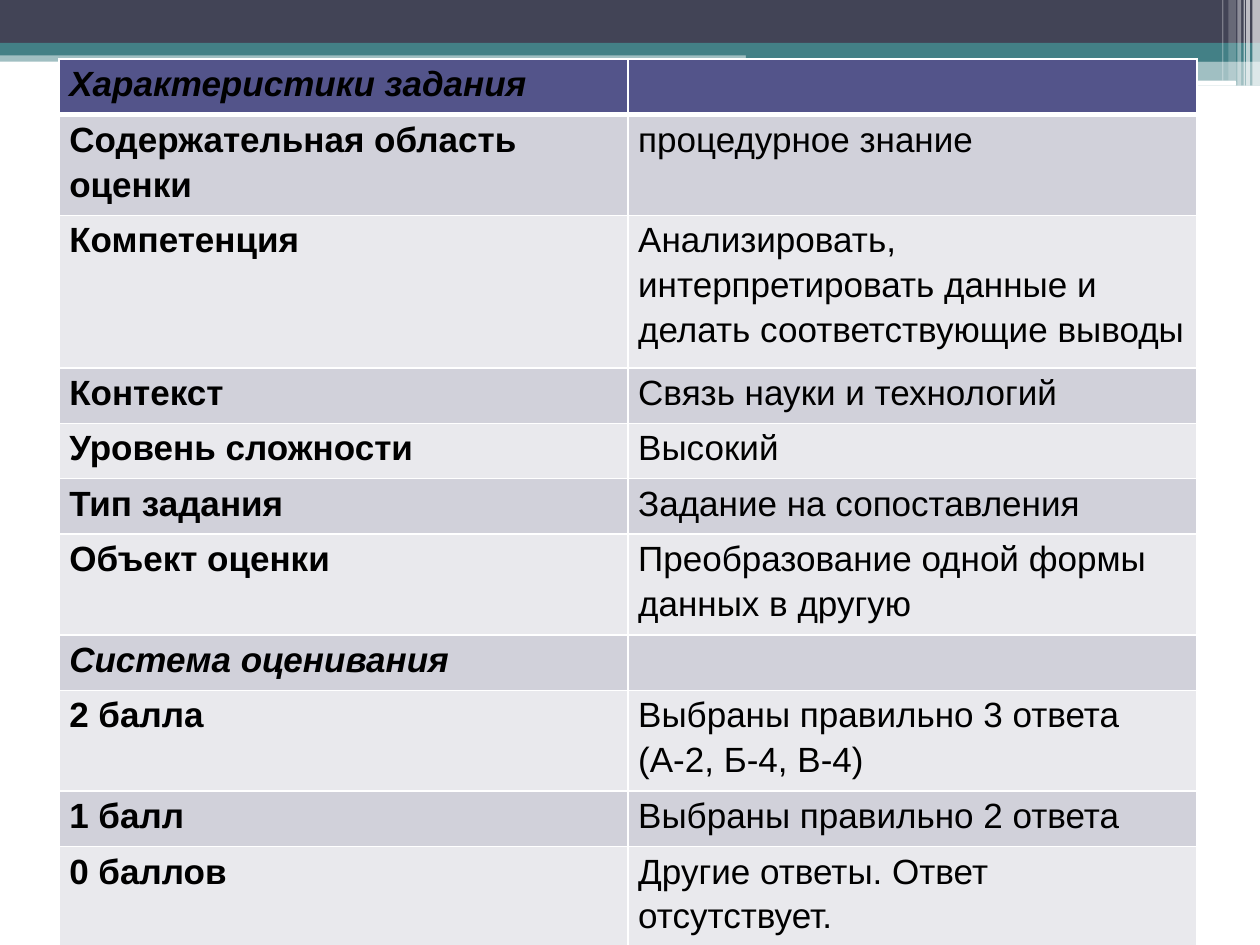
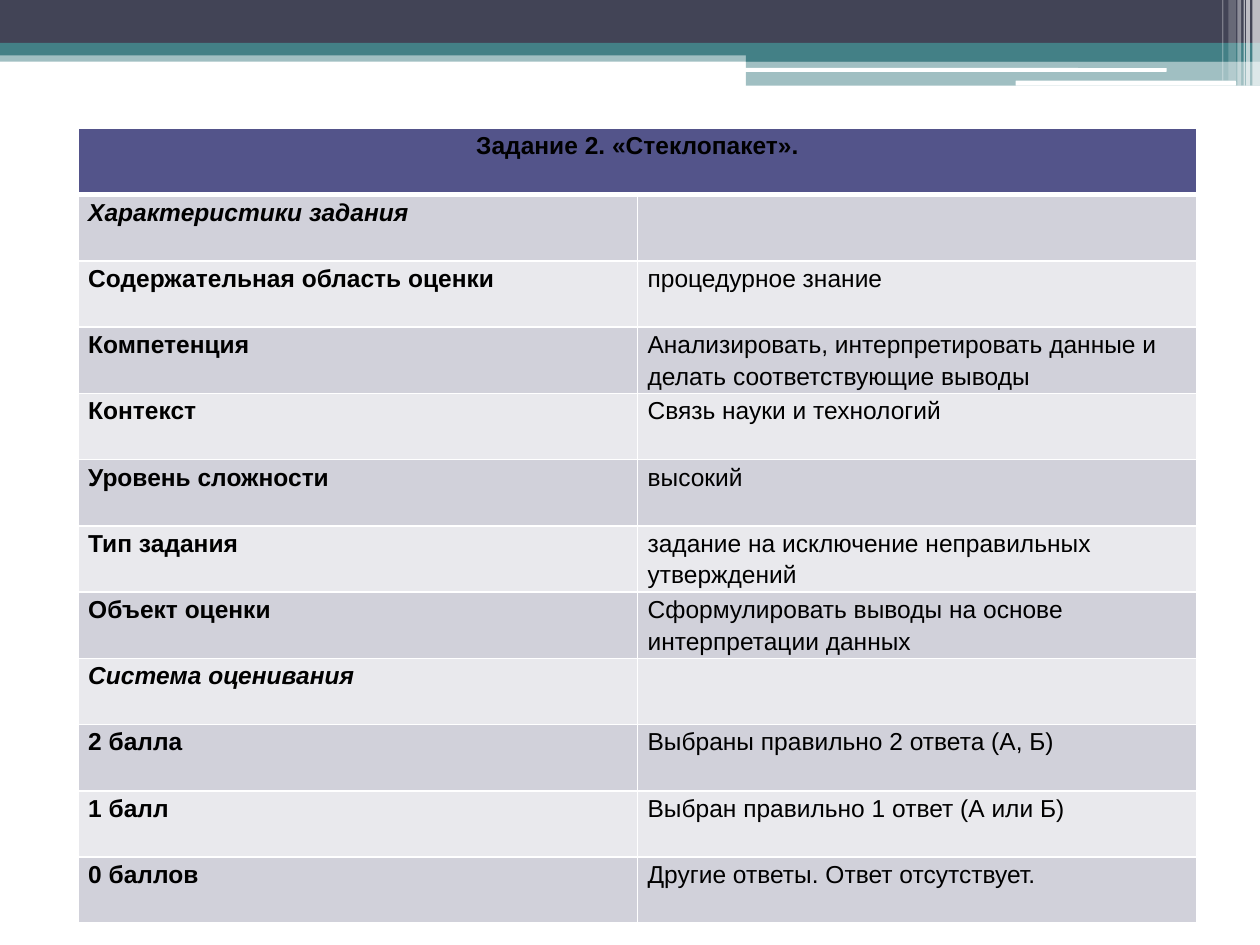
from dataclasses import dataclass

from lxml.etree import SubElement
from pptx import Presentation
from pptx.dml.color import RGBColor
from pptx.enum.shapes import MSO_SHAPE as Preset
from pptx.enum.text import PP_ALIGN as Align
from pptx.oxml.ns import qn
from pptx.util import Inches, Pt


@dataclass(frozen=True)
class Theme:
    """Colours, font and type sizes of the deck."""
    dark: str = "424456"
    teal: str = "438086"
    white: str = "FFFFFF"
    ink: str = "000000"
    header: str = "53548A"
    odd_row: str = "D1D1DA"
    even_row: str = "E9E9ED"
    font: str = "Arial"
    large: int = 20
    small: int = 14
    thin: int = 1
    thick: int = 3


@dataclass(frozen=True)
class Box:
    """A rectangle on the page, in inches."""
    left: float
    top: float
    width: float
    height: float


THEME = Theme()
BLANK_LAYOUT = 6
BAND_HEIGHT = 0.68

BANDS = [
    (Box(0, 0.4, 10, 0.09), THEME.teal, 50),
    (Box(0, 0, 10, 0.34), THEME.dark, 100),
    (Box(0, 0.34, 10, 0.1), THEME.teal, 100),
    (Box(5.92, 0.39, 4.08, 0.1), THEME.teal, 100),
    (Box(5.92, 0.48, 4.08, 0.2), THEME.teal, 50),
]
GROOVES = [Box(5.91, 0.54, 3.35, 0.03), Box(8.06, 0.64, 1.75, 0.04)]
STRIPES = [
    (9.94, 0.06, 0.68, 65), (9.89, 0.03, 0.68, 65), (9.87, 0.01, 0.68, 60),
    (9.82, 0.03, 0.68, 40), (9.75, 0.06, 0.64, 20), (9.7, 0.01, 0.64, 30),
]

LABELS = [
    "Характеристики задания", "Содержательная область оценки", "Компетенция",
    "Контекст", "Уровень сложности", "Тип задания", "Объект оценки",
    "Система оценивания", "2 балла", "1 балл", "0 баллов",
]
SKILL = "Анализировать, интерпретировать данные и делать соответствующие выводы"
MATCHING_VALUES = [
    "", "процедурное знание", SKILL, "Связь науки и технологий", "Высокий",
    "Задание на сопоставления", "Преобразование одной формы данных в другую",
    "", "Выбраны правильно 3 ответа (А-2, Б-4, В-4)",
    "Выбраны правильно 2 ответа", "Другие ответы. Ответ отсутствует.",
]
GLAZING_VALUES = [
    "", "процедурное знание", SKILL, "Связь науки и технологий", "высокий",
    "задание на исключение неправильных утверждений",
    "Сформулировать выводы на основе интерпретации данных",
    "", "Выбраны правильно 2 ответа (А, Б)",
    "Выбран правильно 1 ответ (А или Б)", "Другие ответы. Ответ отсутствует.",
]
GLAZING_TITLE = "Задание 2. «Стеклопакет»."
MATCHING_LINES = [1, 2, 3, 1, 1, 1, 2, 1, 2, 1, 2]
HEIGHT_BY_LINES = {1: 0.44, 2: 0.8, 3: 1.21}


def set_attributes(target, values):
    """Set every named attribute of the target."""
    for name, value in values.items():
        setattr(target, name, value)


def add_bar(page, area, box, color, opacity=100, preset=Preset.RECTANGLE):
    """Draw one plain bar, placed relative to the area."""
    bar = page.shapes.add_shape(
        preset, Inches(area.left + box.left), Inches(area.top + box.top),
        Inches(box.width), Inches(box.height))
    bar.shadow.inherit = False
    bar.line.fill.background()
    bar.fill.solid()
    bar.fill.fore_color.rgb = RGBColor.from_string(color)
    if opacity < 100:
        tint = next(bar.element.iter(qn("a:srgbClr")))
        SubElement(tint, qn("a:alpha"), val=str(opacity * 1000))
    return bar


def add_top_band(page, area):
    """Draw the top decoration and hand it to the layout of the page."""
    bars = [add_bar(page, area, *band) for band in BANDS]
    bars += [add_bar(page, area, groove, THEME.white,
                     preset=Preset.ROUNDED_RECTANGLE) for groove in GROOVES]
    bars += [add_bar(page, area, Box(left, 0, width, height), THEME.white, opacity)
             for left, width, height, opacity in STRIPES]
    tree = page.slide_layout.shapes.element
    for number, bar in enumerate(bars, start=100):
        next(bar.element.iter(qn("p:cNvPr"))).set("id", str(number))
        tree.append(bar.element)


def style_cell(cell, row):
    """Give a cell its margins, white borders and row fill."""
    set_attributes(cell, {
        "margin_left": Inches(0.08), "margin_right": Inches(0.08),
        "margin_top": 0, "margin_bottom": 0})
    properties = cell._tc.get_or_add_tcPr()
    heavy_side = {0: "lnB", 1: "lnT"}.get(row)
    for side in ("lnL", "lnR", "lnT", "lnB"):
        width = THEME.thick if side == heavy_side else THEME.thin
        border = SubElement(properties, qn(f"a:{side}"), w=str(Pt(width)))
        paint = SubElement(border, qn("a:solidFill"))
        SubElement(paint, qn("a:srgbClr"), val=THEME.white)
    color = THEME.header if row == 0 else (THEME.even_row, THEME.odd_row)[row % 2]
    cell.fill.solid()
    cell.fill.fore_color.rgb = RGBColor.from_string(color)


def write_cell(cell, text, size, bold=False, italic=False, align=Align.LEFT):
    """Write one paragraph into a cell."""
    para = cell.text_frame.paragraphs[0]
    set_attributes(para, {
        "alignment": align, "line_spacing": 1.15, "space_after": Pt(7.5)})
    if not text:
        para.font.size = Pt(size)
        return
    span = para.add_run()
    span.text = text
    set_attributes(span.font, {
        "name": THEME.font, "size": Pt(size), "bold": bold, "italic": italic})
    span.font.color.rgb = RGBColor.from_string(THEME.ink)


def add_task_table(page, box, values, heights, size, title=None):
    """Fill the box with a table of labels and values, under an optional title."""
    first = 1 if title else 0
    table = page.shapes.add_table(
        len(heights), 2, Inches(box.left), Inches(box.top),
        Inches(box.width), Inches(box.height)).table
    set_attributes(table, {"first_row": False, "horz_banding": False})
    for column in table.columns:
        column.width = Inches(box.width / 2)
    for index, height in enumerate(heights):
        table.rows[index].height = Inches(height)
        for column in range(2):
            style_cell(table.cell(index, column), index)
    if title:
        table.cell(0, 0).merge(table.cell(0, 1))
        write_cell(table.cell(0, 0), title, size, bold=True, align=Align.CENTER)
    for index, (label, value) in enumerate(zip(LABELS, values), start=first):
        write_cell(table.cell(index, 0), label, size, bold=True, italic=not value)
        write_cell(table.cell(index, 1), value, size)


def add_matching_page(page):
    """Build the page of the matching task."""
    heights = [HEIGHT_BY_LINES[lines] for lines in MATCHING_LINES]
    add_task_table(page, Box(0.47, 0.47, 9.03, sum(heights)),
                   MATCHING_VALUES, heights, THEME.large)


def add_glazing_page(page):
    """Build the page of the glazing task."""
    box = Box(0.62, 1.02, 8.88, 6.31)
    count = len(LABELS) + 1
    add_task_table(page, box, GLAZING_VALUES, [box.height / count] * count,
                   THEME.small, GLAZING_TITLE)


def main():
    """Build and save the deck."""
    deck = Presentation()
    set_attributes(deck, {"slide_width": Inches(10), "slide_height": Inches(7.5)})
    layout = deck.slide_layouts[BLANK_LAYOUT]
    pages = [deck.slides.add_slide(layout) for _ in range(2)]
    add_top_band(pages[0], Box(0, 0, 10, BAND_HEIGHT))
    add_matching_page(pages[0])
    add_glazing_page(pages[1])
    deck.save("out.pptx")


if __name__ == "__main__":
    main()
